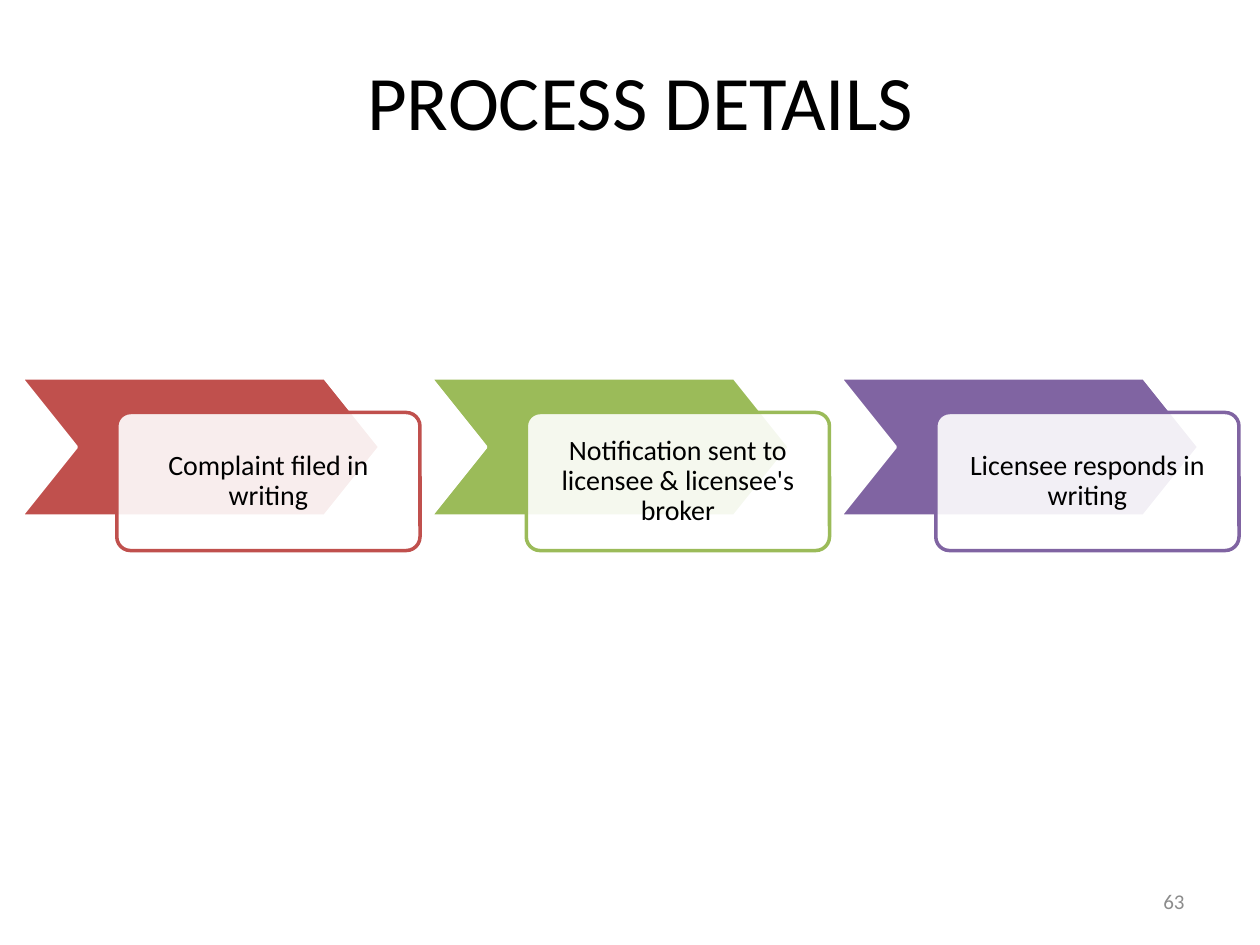
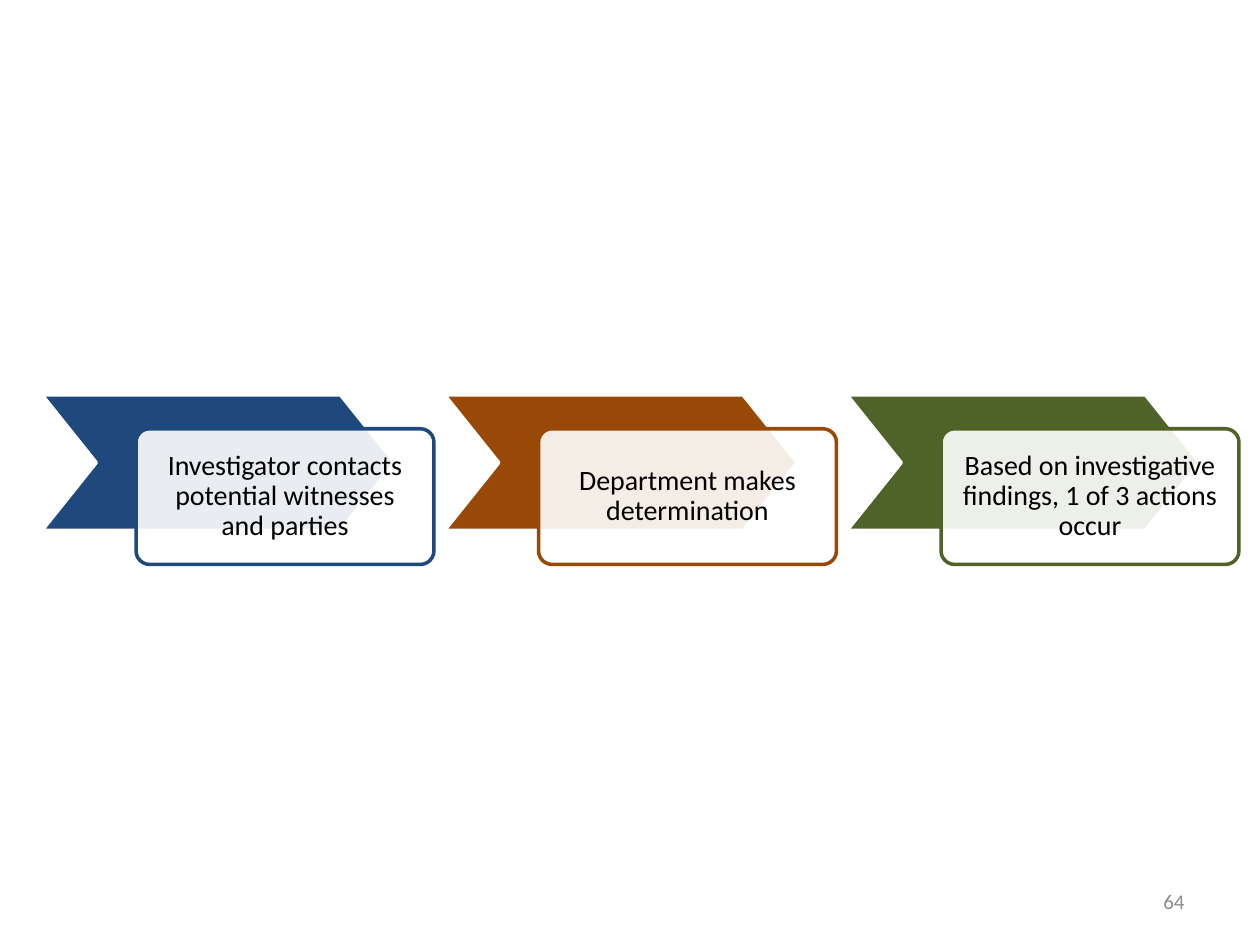
from lxml import etree
from pptx import Presentation
from pptx.dml.color import RGBColor
from pptx.enum.shapes import MSO_SHAPE
from pptx.enum.text import MSO_ANCHOR, PP_ALIGN
from pptx.oxml.ns import qn
from pptx.util import Inches, Pt

CHEVRON = MSO_SHAPE.CHEVRON
ROUNDED_RECTANGLE = MSO_SHAPE.ROUNDED_RECTANGLE
MIDDLE = MSO_ANCHOR.MIDDLE
CENTER = PP_ALIGN.CENTER
RIGHT = PP_ALIGN.RIGHT

BLACK = RGBColor(0x00, 0x00, 0x00)
WHITE = RGBColor(0xFF, 0xFF, 0xFF)
GRAY = RGBColor(0x8C, 0x8C, 0x8C)
RED = RGBColor(0xC0, 0x50, 0x4D)
GREEN = RGBColor(0x9B, 0xBB, 0x59)
PURPLE = RGBColor(0x80, 0x64, 0xA2)
NAVY = RGBColor(0x1F, 0x49, 0x7D)
BROWN = RGBColor(0x98, 0x48, 0x07)
OLIVE = RGBColor(0x4F, 0x62, 0x28)

COLUMNS = 60
RIGHT_EDGE = 59
CARD_OPACITY = "90000"
CARD_INSET = Inches(0.12)

TITLE = {"alignment": CENTER, "size": Pt(44), "color": BLACK}
STEP = {"alignment": CENTER, "line_spacing": 0.9, "size": Pt(16), "color": BLACK}
NUMBER = {"alignment": RIGHT, "size": Pt(12), "color": GRAY}

SLIDES = [
    {
        "title": "PROCESS DETAILS",
        "number": "63",
        "left": 1,
        "top": 18,
        "chevron_width": 17.1,
        "steps": [
            ("Complaint filed in writing", RED),
            ("Notification sent to licensee & licensee's broker", GREEN),
            ("Licensee responds in writing", PURPLE),
        ],
    },
    {
        "title": None,
        "number": "64",
        "left": 2,
        "top": 18.8,
        "chevron_width": 16.8,
        "steps": [
            ("Investigator contacts potential witnesses and parties", NAVY),
            ("Department makes determination", BROWN),
            ("Based on investigative findings, 1 of 3 actions occur", OLIVE),
        ],
    },
]

presentation = Presentation()
presentation.slide_width = Inches(10)
presentation.slide_height = Inches(7.5)
unit = presentation.slide_width / COLUMNS


def grid(*cells):
    return [int(cell * unit) for cell in cells]


def write(shape, text, style):
    frame = shape.text_frame
    frame.word_wrap = True
    frame.vertical_anchor = MIDDLE
    paragraph = frame.paragraphs[0]
    run = paragraph.add_run()
    run.text = text
    run.font.name = "Calibri"
    for name, value in style.items():
        if name == "color":
            run.font.color.rgb = value
        else:
            setattr(run.font if name == "size" else paragraph, name, value)


for content in SLIDES:
    slide = presentation.slides.add_slide(presentation.slide_layouts[6])

    if content["title"]:
        title = slide.shapes.add_textbox(*grid(2, 1, 57, 7.5))
        write(title, content["title"], TITLE)

    width = content["chevron_width"]
    height = width * 5 / 13
    card_width = width * 38 / 45
    card_shift = width * 4 / 15
    card_drop = height / 4
    left, top = content["left"], content["top"]
    steps = content["steps"]
    pitch = (RIGHT_EDGE - left - card_shift - card_width) / (len(steps) - 1)
    process = slide.shapes.add_group_shape()

    for index, (text, color) in enumerate(steps):
        step_left = left + index * pitch
        chevron = process.shapes.add_shape(CHEVRON, *grid(step_left, top, width, height))
        card = process.shapes.add_shape(
            ROUNDED_RECTANGLE,
            *grid(step_left + card_shift, top + card_drop, card_width, height),
        )
        for shape, adjustment, fill, line in (
            (chevron, 0.4, color, WHITE),
            (card, 0.1, WHITE, color),
        ):
            shape.shadow.inherit = False
            shape.adjustments[0] = adjustment
            shape.fill.solid()
            shape.fill.fore_color.rgb = fill
            shape.line.color.rgb = line
            shape.line.width = Pt(2)

        card_fill = card.fill._xPr.find(qn("a:solidFill"))
        etree.SubElement(card_fill[0], qn("a:alpha"), val=CARD_OPACITY)
        for side in ("left", "top", "right", "bottom"):
            setattr(card.text_frame, f"margin_{side}", CARD_INSET)
        write(card, text, STEP)

    number = slide.shapes.add_textbox(*grid(43, 41.7, 14, 2.4))
    write(number, content["number"], NUMBER)

presentation.save("out.pptx")
